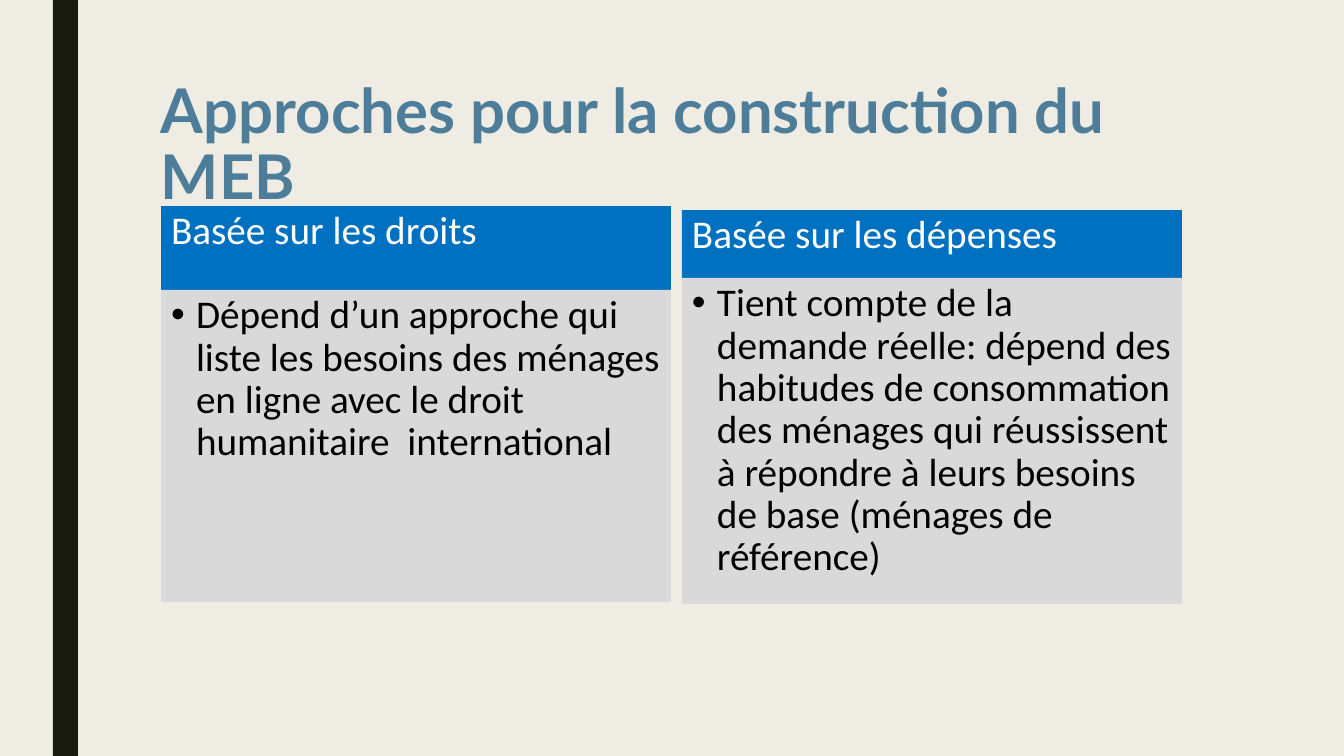
from lxml.etree import SubElement
from pptx import Presentation
from pptx.dml.color import RGBColor
from pptx.enum.shapes import MSO_SHAPE
from pptx.enum.text import MSO_ANCHOR, PP_ALIGN
from pptx.oxml.ns import qn
from pptx.util import Emu, Pt

COLORS = {
    "page": "EFEDE3",
    "bar": "191B0E",
    "title": "4D7D99",
    "head": "0070C0",
    "body": "D9D9D9",
    "white": "FFFFFF",
    "black": "000000",
}
WIDTH, HEIGHT = 1344, 756
INSET, INDENT = 10, 25

# Box of each column, height of its heading, heading and body wording
COLUMNS = [
    ((161, 206, 510, 396), 84, "Basée sur les droits",
     "Dépend d’un approche qui liste les besoins des ménages en ligne "
     "avec le droit humanitaire  international"),
    ((682, 210, 500, 394), 68, "Basée sur les dépenses",
     "Tient compte de la demande réelle: dépend des habitudes de "
     "consommation des ménages qui réussissent à répondre à leurs besoins "
     "de base (ménages de référence)"),
]


def px(count):
    return Emu(round(count * 914400 / 100.8))


def color(name):
    return RGBColor.from_string(COLORS[name])


def add_rect(slide, box, fill):
    rect = slide.shapes.add_shape(MSO_SHAPE.RECTANGLE, *map(px, box))
    rect.shadow.inherit = False
    rect.fill.solid()
    rect.fill.fore_color.rgb = color(fill)
    rect.line.fill.background()
    return rect


def write(shape, text, font, size, ink, spacing):
    """Fill the shape with one left-aligned paragraph and return it."""
    frame = shape.text_frame
    frame.word_wrap = True
    frame.vertical_anchor = MSO_ANCHOR.TOP
    frame.margin_left = frame.margin_right = px(INSET)
    frame.margin_top = frame.margin_bottom = px(INSET / 2)
    para = frame.paragraphs[0]
    para.text = text
    para.alignment = PP_ALIGN.LEFT
    para.line_spacing = spacing
    para.font.name = font
    para.font.size = Pt(size)
    para.font.color.rgb = color(ink)
    return para


def add_bullet(para):
    props = para._p.get_or_add_pPr()
    props.set("marL", str(px(INDENT)))
    props.set("indent", str(-px(INDENT)))
    bullet = props.makeelement(qn("a:buChar"), {"char": "•"})
    face = props.makeelement(qn("a:buFont"), {"typeface": "Arial"})
    # Bullet settings must precede the default run properties
    props.find(qn("a:defRPr")).addprevious(face)
    face.addnext(bullet)


def add_title(slide, box):
    title = slide.shapes.add_textbox(*map(px, box))
    para = write(title, "Approches pour la construction du MEB",
                 "Lato", 44, "title", 0.89)
    para.font.bold = True


def add_column(slide, box, split, head, body):
    left, top, width, height = box
    parts = [
        (top, split, "head", head, "white"),
        (top + split, height - split, "body", body, "black"),
    ]
    for y, tall, fill, text, ink in parts:
        rect = add_rect(slide, (left, y, width, tall), fill)
        para = write(rect, text, "Calibri", 28, ink, 0.9)
        para.space_before = Pt(10)
    add_bullet(para)


def main():
    deck = Presentation()
    deck.slide_width, deck.slide_height = px(WIDTH), px(HEIGHT)
    slide = deck.slides.add_slide(deck.slide_layouts[6])
    slide.background.fill.solid()
    slide.background.fill.fore_color.rgb = color("page")
    add_rect(slide, (53, 0, 25, HEIGHT), "bar")
    add_title(slide, (151, 76, 1058, 88))
    for column in COLUMNS:
        add_column(slide, *column)
    deck.save("out.pptx")


if __name__ == "__main__":
    main()
